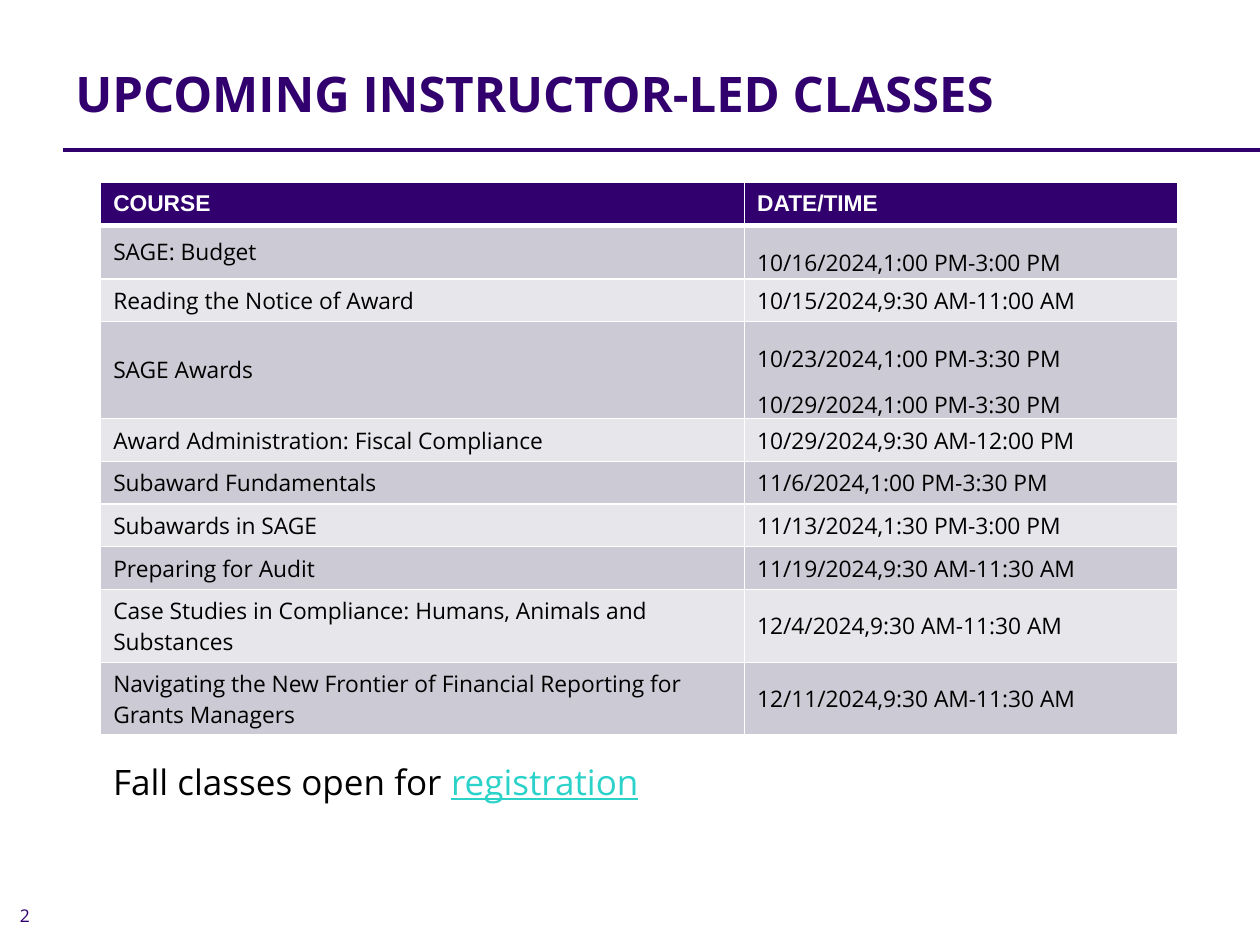
"""Build the slide that lists upcoming instructor-led classes."""
from dataclasses import dataclass

from lxml.etree import SubElement
from pptx import Presentation
from pptx.dml.color import RGBColor as Rgb
from pptx.enum.shapes import MSO_CONNECTOR as Connector
from pptx.enum.text import MSO_ANCHOR as Anchor
from pptx.oxml.ns import qn
from pptx.util import Cm, Pt


@dataclass(frozen=True)
class Theme:
    """Hold the colours, fonts and type sizes of the slide."""

    purple: str = "32006E"
    rule: str = "2F006D"
    black: str = "000000"
    white: str = "FFFFFF"
    link: str = "2AD2C9"
    bands: tuple = ("CCCAD4", "E7E6EA")
    body_font: str = "Open Sans"
    header_font: str = "Arial"
    title_size: int = 28
    note_size: int = 20
    table_size: int = 13
    number_size: int = 10


THEME = Theme()
HEADER = ("COURSE", ["DATE/TIME"], 0.86)
CLASSES = [
    ("SAGE: Budget", ["10/16/2024,1:00 PM-3:00 PM"], 1.07),
    ("Reading the Notice of Award", ["10/15/2024,9:30 AM-11:00 AM"], 0.86),
    ("SAGE Awards", ["10/23/2024,1:00 PM-3:30 PM", "10/29/2024,1:00 PM-3:30 PM"], 1.96),
    ("Award Administration: Fiscal Compliance", ["10/29/2024,9:30 AM-12:00 PM"], 0.86),
    ("Subaward Fundamentals", ["11/6/2024,1:00 PM-3:30 PM"], 0.86),
    ("Subawards in SAGE", ["11/13/2024,1:30 PM-3:00 PM"], 0.86),
    ("Preparing for Audit", ["11/19/2024,9:30 AM-11:30 AM"], 0.86),
    ("Case Studies in Compliance: Humans, Animals and Substances",
     ["12/4/2024,9:30 AM-11:30 AM"], 1.47),
    ("Navigating the New Frontier of Financial Reporting for Grants Managers",
     ["12/11/2024,9:30 AM-11:30 AM"], 1.47),
]
LOOSE_ROWS = {"SAGE: Budget", "SAGE Awards"}
COLUMN_WIDTHS = (12.98, 8.74)


def style(size, color, name=THEME.body_font, **extra):
    """Return the format values of a run."""
    return {"size": Pt(size), "name": name, "color": color, **extra}


def add_run(paragraph, words, formats):
    """Add a run and set its font from the format values."""
    run = paragraph.add_run()
    run.text = words
    for key, value in formats.items():
        if key == "color":
            run.font.color.rgb = Rgb.from_string(value)
        else:
            setattr(run.font, key, value)


def add_text(slide, place, runs, anchor=Anchor.MIDDLE, spacing=None):
    """Add a one-paragraph text box at the place given in centimetres."""
    frame = slide.shapes.add_textbox(*map(Cm, place)).text_frame
    frame.word_wrap = True
    frame.vertical_anchor = anchor
    frame.paragraphs[0].line_spacing = spacing
    for words, formats in runs:
        add_run(frame.paragraphs[0], words, formats)


def add_rule(slide):
    """Draw the line under the title."""
    rule = slide.shapes.add_connector(
        Connector.STRAIGHT, Cm(1.27), Cm(3.02), Cm(25.4), Cm(3.02))
    rule.line.color.rgb = Rgb.from_string(THEME.rule)
    rule.line.width = Pt(2.25)
    SubElement(rule._element.spPr, qn("a:effectLst"))


def add_borders(cell, widths):
    """Give the cell white borders of the given widths in points."""
    properties = cell._tc.get_or_add_tcPr()
    for side, width in widths.items():
        border = SubElement(properties, qn(f"a:ln{side}"), w=str(Pt(width)))
        fill = SubElement(border, qn("a:solidFill"))
        SubElement(fill, qn("a:srgbClr"), val=THEME.white)


def fill_cell(cell, lines, formats, color, widths, spacing=None):
    """Write the lines into a cell and set its borders and fill."""
    add_borders(cell, widths)
    cell.fill.solid()
    cell.fill.fore_color.rgb = Rgb.from_string(color)
    cell.vertical_anchor = Anchor.MIDDLE
    for index, line in enumerate(lines):
        frame = cell.text_frame
        paragraph = frame.add_paragraph() if index else frame.paragraphs[0]
        paragraph.line_spacing = spacing
        add_run(paragraph, line, formats)


def add_schedule(slide):
    """Add the table of courses and their dates."""
    rows = [HEADER, *CLASSES]
    schedule = slide.shapes.add_table(
        len(rows), len(COLUMN_WIDTHS), Cm(2.03), Cm(3.68),
        Cm(sum(COLUMN_WIDTHS)), Cm(sum(row[2] for row in rows))).table
    for column, width in zip(schedule.columns, COLUMN_WIDTHS):
        column.width = Cm(width)
    header_format = style(THEME.table_size, THEME.white, THEME.header_font, bold=True)
    class_format = style(THEME.table_size, THEME.black, bold=False)
    for index, (course, dates, height) in enumerate(rows):
        schedule.rows[index].height = Cm(height)
        formats = class_format if index else header_format
        color = THEME.bands[(index - 1) % 2] if index else THEME.purple
        widths = {"L": 1, "R": 1, "T": 3 if index == 1 else 1, "B": 1 if index else 3}
        spacing = 1.5 if course in LOOSE_ROWS else None
        fill_cell(schedule.cell(index, 0), [course], formats, color, widths)
        fill_cell(schedule.cell(index, 1), dates, formats, color, widths, spacing)


def main():
    """Build and save the slide."""
    deck = Presentation()
    deck.slide_width, deck.slide_height = Cm(25.4), Cm(19.05)
    slide = deck.slides.add_slide(deck.slide_layouts[6])
    add_rule(slide)
    add_text(slide, (0.15, 18.11, 1.12, 0.69),
             [("2", style(THEME.number_size, THEME.purple))])
    add_text(slide, (1.27, 0.76, 22.86, 2.21),
             [("UPCOMING INSTRUCTOR-LED CLASSES",
               style(THEME.title_size, THEME.purple, bold=True))])
    add_text(slide, (2.03, 14.99, 18.14, 1.24),
             [("Fall classes open for ", style(THEME.note_size, THEME.black)),
              ("registration", style(THEME.note_size, THEME.link, underline=True))],
             Anchor.TOP, 1.25)
    add_schedule(slide)
    deck.save("out.pptx")


if __name__ == "__main__":
    main()
